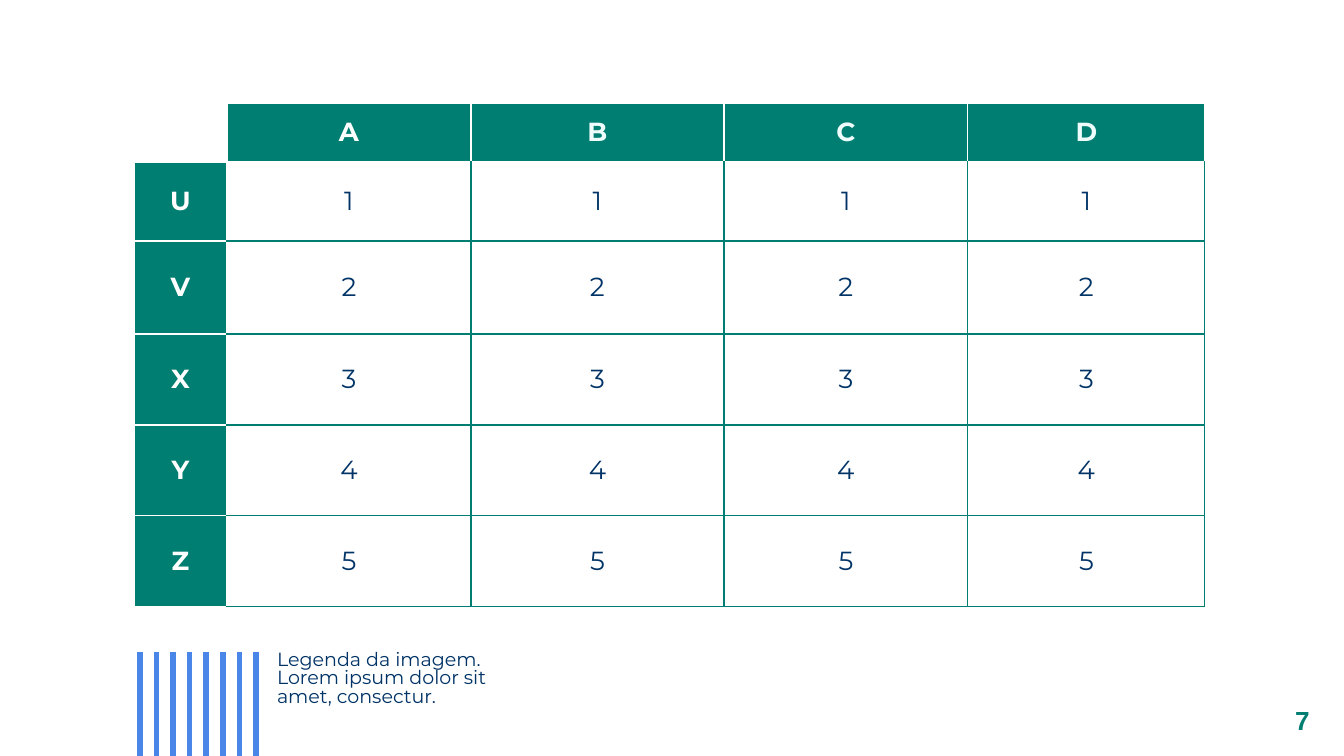
from lxml import etree
from pptx import Presentation
from pptx.dml.color import RGBColor
from pptx.enum.shapes import MSO_CONNECTOR, MSO_SHAPE
from pptx.enum.text import MSO_ANCHOR, PP_ALIGN
from pptx.oxml.ns import qn
from pptx.util import Pt

STRAIGHT = MSO_CONNECTOR.STRAIGHT
RECTANGLE = MSO_SHAPE.RECTANGLE
MIDDLE = MSO_ANCHOR.MIDDLE
CENTER = PP_ALIGN.CENTER

SLIDE_WIDTH, SLIDE_HEIGHT = 1344, 756
EMU_PER_PX = 9144000 / SLIDE_WIDTH

TEAL, NAVY, BLUE = "007E71", "003366", "4A86E8"
WHITE, PALE = "FFFFFF", "EEFCFC"

COLUMN_WIDTHS = [93, 244, 253, 244, 237]
ROW_HEIGHTS = [59, 79, 93, 91, 91, 91]
HEADINGS = ["", "A", "B", "C", "D"]
ROW_LABELS = ["U", "V", "X", "Y", "Z"]


def px(length):
    return round(length * EMU_PER_PX)


def box_emu(box):
    return [px(length) for length in box]


def rgb(color):
    return RGBColor.from_string(color)


def style_text(paragraph, size, color, font="Montserrat", bold=False):
    for run in paragraph.runs:
        run.font.size = Pt(size)
        run.font.name = font
        run.font.bold = bold
        run.font.color.rgb = rgb(color)


def set_borders(cell, colors):
    properties = cell._tc.get_or_add_tcPr()
    for index, (side, color) in enumerate(colors.items()):
        border = etree.Element(qn(f"a:ln{side}"), w=str(Pt(0.75)))
        fill = etree.SubElement(border, qn("a:solidFill"))
        etree.SubElement(fill, qn("a:srgbClr"), val=color)
        properties.insert(index, border)


def style_cell(cell, row, column):
    is_header = row == 0 or column == 0
    cell.vertical_anchor = MIDDLE
    if is_header:
        cell.fill.solid()
        cell.fill.fore_color.rgb = rgb(TEAL if row or column else WHITE)
    else:
        cell.fill.background()
    outer = WHITE if is_header else TEAL
    set_borders(cell, {
        "L": WHITE if row == 0 or column <= 1 else TEAL,
        "R": outer,
        "T": WHITE if column == 0 or row <= 1 else TEAL,
        "B": outer,
    })
    label_color = PALE if row == 0 and column > 1 else WHITE
    paragraph = cell.text_frame.paragraphs[0]
    paragraph.alignment = CENTER
    style_text(paragraph, 14, label_color if is_header else NAVY, bold=is_header)


def add_data_table(slide, box):
    rows = [HEADINGS]
    for number, label in enumerate(ROW_LABELS, start=1):
        rows.append([label] + [str(number)] * (len(HEADINGS) - 1))
    table = slide.shapes.add_table(len(rows), len(HEADINGS), *box_emu(box)).table
    table.horz_banding = False
    table.first_row = False
    for column, width in zip(table.columns, COLUMN_WIDTHS):
        column.width = px(width)
    for table_row, height in zip(table.rows, ROW_HEIGHTS):
        table_row.height = px(height)
    for row, values in enumerate(rows):
        for column, value in enumerate(values):
            cell = table.cell(row, column)
            cell.text_frame.text = value
            style_cell(cell, row, column)


def add_stripes(slide, box, count=8):
    left, top, width, height = box
    for index in range(count):
        x = px(left + index * width / (count - 1))
        stripe = slide.shapes.add_connector(STRAIGHT, x, px(top), x, px(top + height))
        stripe.line.color.rgb = rgb(BLUE)
        stripe.line.width = Pt(3)
        etree.SubElement(stripe._element.spPr, qn("a:effectLst"))


def add_caption(slide, box):
    frame = slide.shapes.add_textbox(*box_emu(box)).text_frame
    frame.word_wrap = True
    frame.margin_left = frame.margin_top = frame.margin_right = 0
    frame.margin_bottom = px(13)
    frame.text = "Legenda da imagem. Lorem ipsum dolor sit amet, consectur."
    paragraph = frame.paragraphs[0]
    paragraph.line_spacing = 0.8
    paragraph.space_after = Pt(10)
    style_text(paragraph, 10.2, NAVY)


def add_page_number(slide, box):
    badge = slide.shapes.add_shape(RECTANGLE, *box_emu(box))
    badge.shadow.inherit = False
    badge.fill.solid()
    badge.fill.fore_color.rgb = rgb(WHITE)
    badge.line.fill.background()
    frame = badge.text_frame
    frame.vertical_anchor = MIDDLE
    frame.text = "7"
    frame.paragraphs[0].alignment = CENTER
    style_text(frame.paragraphs[0], 14, TEAL, font="Arial", bold=True)


def main():
    presentation = Presentation()
    presentation.slide_width = px(SLIDE_WIDTH)
    presentation.slide_height = px(SLIDE_HEIGHT)
    blank_layout = presentation.slide_layouts[6]
    slide = presentation.slides.add_slide(blank_layout)
    add_stripes(slide, (140, 652, 116, 104))
    add_page_number(slide, (1261, 685, 83, 71))
    add_caption(slide, (277, 652, 237, 89))
    add_data_table(slide, (134, 103, sum(COLUMN_WIDTHS), sum(ROW_HEIGHTS)))
    presentation.save("out.pptx")


if __name__ == "__main__":
    main()
